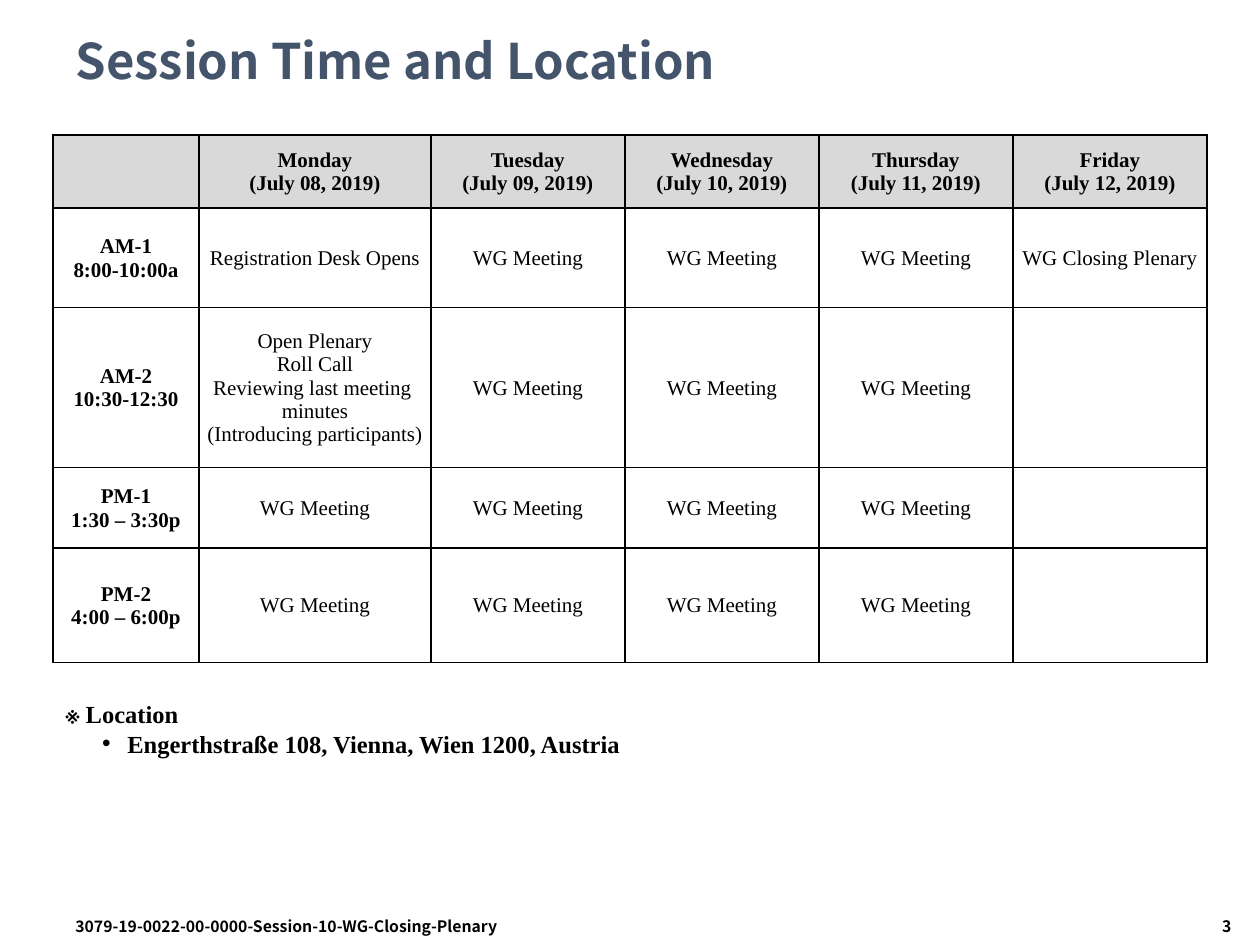
from dataclasses import dataclass

from lxml.etree import SubElement
from pptx import Presentation
from pptx.dml.color import RGBColor
from pptx.enum.text import MSO_ANCHOR as Anchor, MSO_AUTO_SIZE as AutoSize, PP_ALIGN as Align
from pptx.oxml.ns import qn
from pptx.util import Inches, Pt


@dataclass(frozen=True)
class Theme:
    heading_font: str = "Noto Sans CJK KR"
    body_font: str = "Times New Roman"
    title_color: str = "44546A"
    text_color: str = "000000"
    header_fill: str = "D9D9D9"
    cell_fill: str = "FFFFFF"
    title_size: int = 28
    location_size: int = 14
    table_size: int = 12
    footer_size: int = 9
    border_width: int = 1


THEME = Theme()
WIDTH, HEIGHT = 10, 7.5
MARGIN, TABLE_LEFT = 0.5, 0.42
TABLE_WIDTH = WIDTH - 2 * TABLE_LEFT
FOOTER_TOP, FOOTER_HEIGHT = 7.23, HEIGHT - 7.23

MEETING = "WG Meeting"
DAYS = ["Monday", "Tuesday", "Wednesday", "Thursday", "Friday"]
FIRST_DATE = 8
OPENING = ("Open Plenary\nRoll Call\nReviewing last meeting \vminutes\n"
           "(Introducing participants)")
SESSIONS = [  # label, Monday, Friday; the days between are working meetings
    ("AM-1\n8:00-10:00a", "Registration Desk Opens", "WG Closing Plenary"),
    ("AM-2\n10:30-12:30", OPENING, ""),
    ("PM-1\n1:30 – 3:30p", MEETING, ""),
    ("PM-2\n4:00 – 6:00p", MEETING, ""),
]
LABEL_WIDTH, MONDAY_WIDTH = 1.16, 1.84
DAY_WIDTH = (TABLE_WIDTH - LABEL_WIDTH - MONDAY_WIDTH) / 4
COLUMN_WIDTHS = [LABEL_WIDTH, MONDAY_WIDTH] + [DAY_WIDTH] * 4
ROW_HEIGHTS = [0.58, 0.79, 1.27, 0.64, 0.91]


def style_paragraph(paragraph, font, size, color=THEME.text_color, bold=True, align=Align.LEFT):
    paragraph.alignment = align
    paragraph.space_before = Pt(0)
    paragraph.font.name = font
    paragraph.font.size = Pt(size)
    paragraph.font.bold = bold
    paragraph.font.color.rgb = RGBColor.from_string(color)


def place(shape, left, top, width, height):
    shape.left, shape.top = Inches(left), Inches(top)
    shape.width, shape.height = Inches(width), Inches(height)


def set_bullet(paragraph, character=None, margin=0, indent=0):
    """Give the paragraph a bullet character, or none, and its indents."""
    properties = paragraph._p.get_or_add_pPr()
    properties.set("marL", str(Inches(margin)))
    properties.set("indent", str(Inches(indent)))
    if character:
        SubElement(properties, qn("a:buChar"), char=character)
    else:
        SubElement(properties, qn("a:buNone"))


def add_title(slide, text):
    title = slide.shapes.title
    place(title, MARGIN, 0.17, WIDTH - 2 * MARGIN, 0.67)
    frame = title.text_frame
    frame.text = text
    frame.auto_size = AutoSize.NONE
    frame.vertical_anchor = Anchor.MIDDLE
    paragraph = frame.paragraphs[0]
    paragraph.line_spacing = 0.9
    style_paragraph(paragraph, THEME.heading_font, THEME.title_size, THEME.title_color)


def add_location(slide, heading, address):
    body = slide.placeholders[1]
    place(body, TABLE_LEFT, 5.5, TABLE_WIDTH, 0.57)
    frame = body.text_frame
    frame.text = f"{heading}\n{address}"
    frame.auto_size = AutoSize.NONE
    frame.vertical_anchor = Anchor.TOP
    heading_paragraph, address_paragraph = frame.paragraphs
    set_bullet(heading_paragraph)
    set_bullet(address_paragraph, "•", 0.49, -0.2)
    for paragraph in frame.paragraphs:
        style_paragraph(paragraph, THEME.body_font, THEME.location_size)


def add_footer(slide, text, left, width, align):
    box = slide.shapes.add_textbox(
        Inches(left), Inches(FOOTER_TOP), Inches(width), Inches(FOOTER_HEIGHT))
    box.text_frame.word_wrap = True
    box.text_frame.text = text
    style_paragraph(box.text_frame.paragraphs[0], THEME.heading_font, THEME.footer_size,
                    align=align)


def set_borders(cell):
    properties = cell._tc.get_or_add_tcPr()
    for side in ("lnL", "lnR", "lnT", "lnB"):
        line = SubElement(properties, qn(f"a:{side}"), w=str(Pt(THEME.border_width)))
        fill = SubElement(line, qn("a:solidFill"))
        SubElement(fill, qn("a:srgbClr"), val=THEME.text_color)


def fill_cell(cell, text, fill, bold):
    cell.margin_left = cell.margin_right = cell.margin_top = Inches(0.01)
    cell.margin_bottom = 0
    cell.vertical_anchor = Anchor.MIDDLE
    set_borders(cell)
    cell.fill.solid()
    cell.fill.fore_color.rgb = RGBColor.from_string(fill)
    cell.text = text
    for paragraph in cell.text_frame.paragraphs:
        style_paragraph(paragraph, THEME.body_font, THEME.table_size, bold=bold,
                        align=Align.CENTER)


def schedule_rows():
    header = [""] + [f"{day}\n(July {date:02d}, 2019)"
                     for date, day in enumerate(DAYS, FIRST_DATE)]
    return [header] + [[label, monday] + [MEETING] * 3 + [friday]
                       for label, monday, friday in SESSIONS]


def add_schedule(slide):
    table = slide.shapes.add_table(
        len(ROW_HEIGHTS), len(COLUMN_WIDTHS), Inches(TABLE_LEFT), Inches(1.07),
        Inches(TABLE_WIDTH), Inches(sum(ROW_HEIGHTS))).table
    table.horz_banding = False
    for column, width in zip(table.columns, COLUMN_WIDTHS):
        column.width = Inches(width)
    for row, height in zip(table.rows, ROW_HEIGHTS):
        row.height = Inches(height)
    for row_index, texts in enumerate(schedule_rows()):
        fill = THEME.cell_fill if row_index else THEME.header_fill
        for column_index, text in enumerate(texts):
            is_heading = row_index == 0 or column_index == 0
            fill_cell(table.cell(row_index, column_index), text, fill, is_heading)


def main():
    presentation = Presentation()
    presentation.slide_width, presentation.slide_height = Inches(WIDTH), Inches(HEIGHT)
    slide = presentation.slides.add_slide(presentation.slide_layouts[1])
    add_title(slide, "Session Time and Location")
    add_footer(slide, "3", 8.25, 1.62, Align.RIGHT)
    add_footer(slide, "3079-19-0022-00-0000-Session-10-WG-Closing-Plenary",
               MARGIN, 4.42, Align.LEFT)
    add_location(slide, "※ Location", "Engerthstraße 108, Vienna, Wien 1200, Austria")
    add_schedule(slide)
    presentation.save("out.pptx")


if __name__ == "__main__":
    main()
